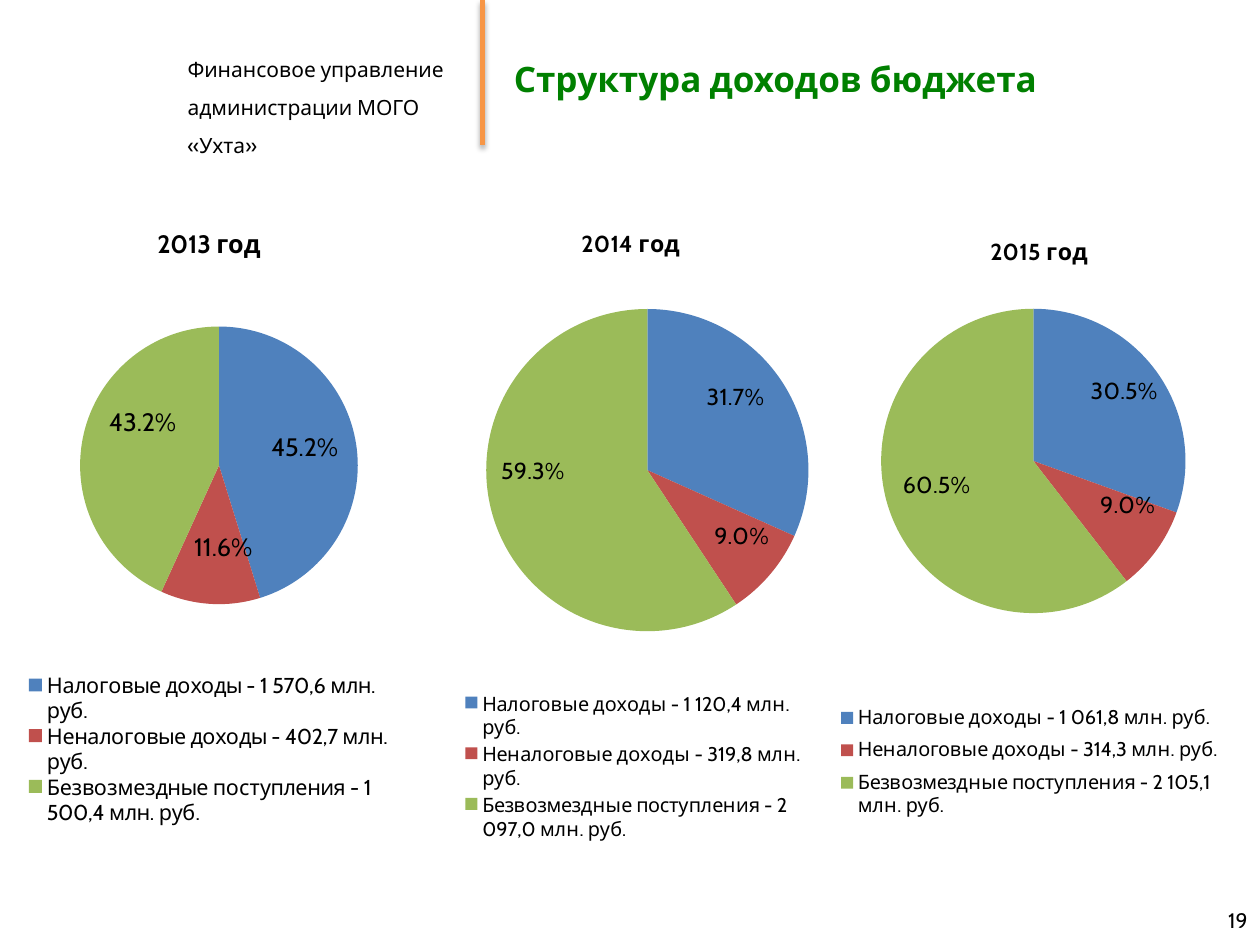
from copy import deepcopy
from dataclasses import dataclass

from lxml import etree
from pptx import Presentation
from pptx import util as u
from pptx.chart.data import CategoryChartData
from pptx.dml.color import RGBColor
from pptx.enum import chart as ch, shapes, text
from pptx.oxml import parse_xml
from pptx.oxml.ns import nsdecls, qn

WIDTH, HEIGHT = 10, 7.5
FONT = "Cabin"
BLACK, GREEN, ORANGE = "000000", "008000", "F79646"
SLICE_COLOURS = ("4F81BD", "C0504D", "9BBB59")


@dataclass
class YearPie:
    """Budget income of one year; layouts are shares of the chart's frame."""
    year: int
    frame: tuple[float, float, float, float]
    plot: tuple[float, float, float, float]
    legend: tuple[float, float, float, float]
    title: tuple[float, float]
    categories: tuple[str, ...]
    values: tuple[float, ...]
    label_shifts: tuple[tuple[float, float], ...]
    title_size: float = 13.2
    legend_size: float = 11.3


PIES = (
    YearPie(2014, (3.4, 1.6, 3.28, 5.61), (0.14, 0.15, 0.78, 0.46),
            (0.07, 0.69, 0.85, 0.22), (0.36, 0.03),
            ("Налоговые доходы - 1 120,4 млн. руб.",
             "Неналоговые доходы - 319,8 млн. руб.",
             "Безвозмездные поступления - 2 097,0 млн. руб."),
            (31.7, 9, 59.3), ((0.05, -0.04), (0.08, 0.02), (-0.09, -0.03))),
    YearPie(2013, (0.06, 1.6, 3.39, 5.51), (0.12, 0.18, 0.75, 0.4),
            (0.05, 0.68, 0.84, 0.22), (0.34, 0.03),
            ("Налоговые доходы - 1 570,6 млн. руб.",
             "Неналоговые доходы - 402,7 млн. руб.",
             "Безвозмездные поступления - 1 500,4 млн. руб."),
            (45.2, 11.6, 43.2), ((0.04, -0.01), (0.02, 0.02), (-0.02, -0.04)),
            14.4, 12.3),
    YearPie(2015, (6.49, 1.68, 3.26, 5.14), (0.15, 0.15, 0.75, 0.47),
            (0.04, 0.75, 0.95, 0.2), (0.41, 0.03),
            ("Налоговые доходы - 1 061,8 млн. руб.",
             "Неналоговые доходы - 314,3 млн. руб.",
             "Безвозмездные поступления - 2 105,1 млн. руб."),
            (30.5, 9, 60.5), ((0.07, -0.04), (0.08, 0), (-0.06, 0))),
)


def colour(value: str) -> RGBColor:
    return RGBColor.from_string(value)


def style_font(font, size: float, value: str = BLACK, bold: bool = False) -> None:
    font.name = FONT
    font.size = u.Pt(size)
    font.bold = bold
    font.color.rgb = colour(value)


def add_text(slide, frame, lines, size, value=BLACK, bold=False, spacing=1.0,
             align=text.PP_ALIGN.LEFT, anchor=text.MSO_ANCHOR.MIDDLE) -> None:
    box = slide.shapes.add_textbox(*map(u.Inches, frame))
    box.text_frame.word_wrap = True
    box.text_frame.vertical_anchor = anchor
    box.text_frame.text = "\n".join(lines)
    for paragraph in box.text_frame.paragraphs:
        paragraph.line_spacing = spacing
        paragraph.alignment = align
        for run in paragraph.runs:
            style_font(run.font, size, value, bold)


def add_divider(slide, x: float, bottom: float) -> None:
    line = slide.shapes.add_connector(
        shapes.MSO_CONNECTOR.STRAIGHT, u.Inches(x), 0, u.Inches(x), u.Inches(bottom))
    line.line.color.rgb = colour(ORANGE)
    line.line.width = u.Pt(3)
    line.element.spPr.append(parse_xml(
        f'<a:effectLst {nsdecls("a")}><a:outerShdw blurRad="39370" dist="22860" '
        'dir="5400000" rotWithShape="0"><a:srgbClr val="000000">'
        '<a:alpha val="35000"/></a:srgbClr></a:outerShdw></a:effectLst>'))


def set_layout(parent, index: int, share, inner=False, edge=True) -> None:
    """Place a chart part by shares of the chart: x, y and perhaps w, h."""
    for old in parent.findall(qn("c:layout")):
        parent.remove(old)
    layout = etree.Element(qn("c:layout"))
    manual = etree.SubElement(layout, qn("c:manualLayout"))
    settings = [("layoutTarget", "inner")] if inner else []
    if edge:
        settings += [("xMode", "edge"), ("yMode", "edge")]
    settings += zip("xywh", share)
    for name, value in settings:
        etree.SubElement(manual, qn(f"c:{name}")).set("val", str(value))
    parent.insert(index, layout)


def shift_labels(labels, shifts) -> None:
    """Give each slice its own label, moved from the slice's centre."""
    shared = [child for child in labels if child.tag != qn("c:showLeaderLines")]
    for index, shift in enumerate(shifts):
        label = etree.Element(qn("c:dLbl"))
        etree.SubElement(label, qn("c:idx")).set("val", str(index))
        label.extend([deepcopy(child) for child in shared])
        set_layout(label, 1, shift, edge=False)
        labels.insert(index, label)


def add_pie(slide, pie: YearPie) -> None:
    data = CategoryChartData()
    data.categories = pie.categories
    data.add_series("Series 1", pie.values)
    chart = slide.shapes.add_chart(
        ch.XL_CHART_TYPE.PIE, *map(u.Inches, pie.frame), data).chart
    style_font(chart.font, 18)

    # Title and legend
    chart.has_title = True
    chart.chart_title.text_frame.text = f"{pie.year} год"
    style_font(chart.chart_title.text_frame.paragraphs[0].runs[0].font,
               pie.title_size, bold=True)
    chart.has_legend = True
    chart.legend.position = ch.XL_LEGEND_POSITION.RIGHT
    chart.legend.include_in_layout = False
    style_font(chart.legend.font, pie.legend_size)

    # Slices and percentages
    plot = chart.plots[0]
    plot.vary_by_categories = True
    series = plot.series[0]
    for index, value in enumerate(SLICE_COLOURS):
        fill = series.points[index].format.fill
        fill.solid()
        fill.fore_color.rgb = colour(value)
    labels = series.data_labels
    labels.show_percentage = True
    labels.show_value = False
    labels.number_format = "0.0%"
    labels.number_format_is_linked = False
    labels.position = ch.XL_LABEL_POSITION.CENTER
    style_font(labels.font, pie.title_size)

    # Placement of the parts
    def part(name: str):
        return chart.element.xpath(f".//c:{name}")[0]

    shift_labels(part("dLbls"), pie.label_shifts)
    set_layout(part("title"), 1, pie.title)
    set_layout(part("legend"), 1, pie.legend)
    set_layout(part("plotArea"), 0, pie.plot, inner=True)


def main() -> None:
    presentation = Presentation()
    presentation.slide_width = u.Inches(WIDTH)
    presentation.slide_height = u.Inches(HEIGHT)
    slide = presentation.slides.add_slide(presentation.slide_layouts[6])

    # Header
    add_text(slide, (1.39, 0.3, 2.5, 0.66),
             ("Финансовое управление", "администрации МОГО «Ухта»"), 12,
             spacing=1.5, anchor=text.MSO_ANCHOR.TOP)
    add_divider(slide, 3.83, 1.15)
    add_text(slide, (3.98, 0, 4.88, 1.01), ("Структура доходов бюджета",), 20,
             GREEN, bold=True, spacing=1.7)

    # Income by year
    for pie in PIES:
        add_pie(slide, pie)

    # Slide number
    add_text(slide, (7.67, 7.1, 2.33, 0.4), ("19",), 12, align=text.PP_ALIGN.RIGHT)
    presentation.save("out.pptx")


if __name__ == "__main__":
    main()
